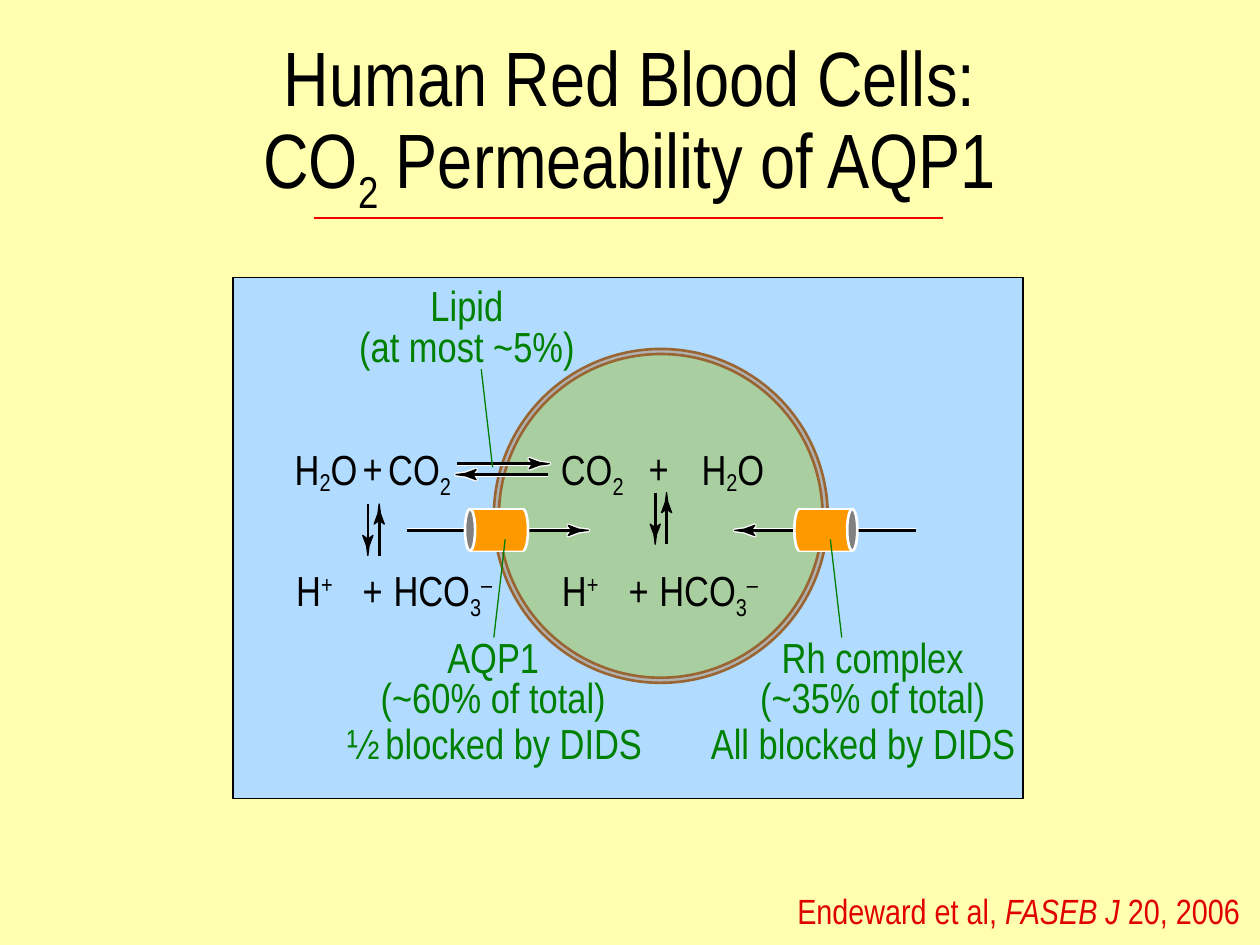
from dataclasses import dataclass

from lxml import etree
from pptx import Presentation
from pptx import util as u
from pptx.dml.color import RGBColor
from pptx.enum import shapes, text
from pptx.oxml import ns

Pt = u.Pt


@dataclass(frozen=True)
class Theme:
    font: str = "Arial Narrow"
    title_size: float = 44
    label_size: float = 24
    citation_size: float = 20
    page: str = "FFFFAF"
    panel: str = "B2DCFF"
    membrane: str = "B2B2B2"
    membrane_edge: str = "996633"
    cytosol: str = "A9CFA1"
    channel: str = "FF9900"
    channel_mouth: str = "808080"
    ink: str = "000000"
    halo: str = "FFFFFF"
    label: str = "008000"
    rule: str = "F00000"
    citation: str = "E10000"


THEME = Theme()
ALIGN = text.PP_ALIGN
OVAL, RECT = shapes.MSO_SHAPE.OVAL, shapes.MSO_SHAPE.RECTANGLE

WATER = ["H", ("2", -14), "O"]
DIOXIDE = ["CO", ("2", -25)]
PROTON = ["H", ("+", 30)]
BICARBONATE = ["HCO", ("3", -25), ("–", 30)]


def add_text(slide, box, lines, size=THEME.label_size, color=THEME.ink,
             align=ALIGN.CENTER, spacing=None, wrap=False, grow=True,
             anchor=text.MSO_ANCHOR.TOP):
    frame = slide.shapes.add_textbox(*map(Pt, box)).text_frame
    frame.word_wrap = wrap
    frame.vertical_anchor = anchor
    if grow:
        frame.auto_size = text.MSO_AUTO_SIZE.SHAPE_TO_FIT_TEXT
    for index, line in enumerate(lines):
        paragraph = frame.paragraphs[0] if index == 0 else frame.add_paragraph()
        paragraph.alignment = align
        if spacing:
            paragraph.line_spacing = spacing
        for part in line:
            if part == "\n":
                paragraph.add_line_break()
                continue
            words, style = part if isinstance(part, tuple) else (part, None)
            run = paragraph.add_run()
            run.text = words
            run.font.name = THEME.font
            run.font.size = Pt(size)
            run.font.color.rgb = RGBColor.from_string(color)
            if style == "italic":
                run.font.italic = True
            elif style:
                run._r.get_or_add_rPr().set("baseline", str(style * 1000))


def paint(shape, fill, edge, width):
    shape.shadow.inherit = False
    shape.fill.solid()
    shape.fill.fore_color.rgb = RGBColor.from_string(fill)
    if edge:
        shape.line.color.rgb = RGBColor.from_string(edge)
        shape.line.width = Pt(width)
    else:
        shape.line.fill.background()


def add_block(slide, kind, box, fill, edge=None, width=1.5):
    paint(slide.shapes.add_shape(kind, *map(Pt, box)), fill, edge, width)


def add_line(slide, start, end, color, width):
    line = slide.shapes.add_connector(
        shapes.MSO_CONNECTOR.STRAIGHT, *map(Pt, (*start, *end)))
    line.line.color.rgb = RGBColor.from_string(color)
    line.line.width = Pt(width)
    etree.SubElement(line._element.spPr, ns.qn("a:effectLst"))


def add_arrow(slide, tail, tip, halo=False):
    dx, dy = tip[0] - tail[0], tip[1] - tail[1]
    length = abs(dx) + abs(dy)
    dx, dy = dx / length, dy / length

    def behind(back, side):
        return (tip[0] - back * dx - side * dy, tip[1] - back * dy + side * dx)

    outline = [behind(*step) for step in (
        (9.4, 0), (11.5, 2.9), (5.6, 0.7), (0, 0), (5.6, -0.7), (11.5, -2.9))]
    coats = [(THEME.halo, 2.25, 2.25)] if halo else []
    for color, shaft_width, head_width in coats + [(THEME.ink, 1.5, 0.75)]:
        add_line(slide, tail, behind(9.2, 0), color, shaft_width)
        builder = slide.shapes.build_freeform(*map(Pt, outline[0]))
        builder.add_line_segments([tuple(map(Pt, point)) for point in outline[1:]])
        paint(builder.convert_to_shape(), color, color, head_width)


def add_title(slide, box):
    left, top, width, height = box
    add_text(slide, box,
             [["Human Red Blood Cells:", "\n", *DIOXIDE, " Permeability of AQP1"]],
             size=THEME.title_size, spacing=0.8, wrap=True, grow=False,
             anchor=text.MSO_ANCHOR.MIDDLE)
    rule = top + height + 7.2
    add_line(slide, (left + 179.3, rule), (left + 538.6, rule), THEME.rule, 1.5)


def add_channel(slide, box, mouth_left):
    left, top, width, height = box
    cap = 5.8
    add_line(slide, (left, top + height), (left + width, top + height), THEME.halo, 1.5)
    ends = [left - cap / 2, left + width - cap / 2]
    mouth, back = ends if mouth_left else reversed(ends)
    add_block(slide, OVAL, (back, top, cap, height), THEME.channel, THEME.halo)
    add_block(slide, RECT, box, THEME.channel)
    add_block(slide, OVAL, (mouth, top, cap, height), THEME.channel_mouth, THEME.halo)
    add_line(slide, (left, top), (left + width, top), THEME.halo, 1.5)


def add_cell_diagram(slide, box):
    left, top, width, height = box

    def at(x, y):
        return left + x, top + y

    add_block(slide, RECT, box, THEME.panel, THEME.ink, 0.75)
    add_block(slide, OVAL, (*at(149, 41), 190.8, 190.8),
              THEME.membrane, THEME.membrane_edge)
    add_block(slide, OVAL, (*at(151.9, 43.9), 185, 185),
              THEME.cytosol, THEME.membrane_edge)

    upper, lower = 91.4, 160.6
    species = [
        (WATER, 51, upper, (28.1, 260.6)),
        (DIOXIDE, 53.3, upper, (79.9, 178.6)),
        (PROTON, 36.7, lower, (28.1, 180)),
        (BICARBONATE, 74.2, lower, (82.8, 234.7)),
        (["+"], 25.9, upper - 0.4, (67, 230.4)),
        (["+"], 25.9, lower, (67, 218.9)),
    ]
    for formula, wide, y, columns in species:
        wraps = formula in (DIOXIDE, BICARBONATE)
        align = ALIGN.LEFT if formula in (WATER, ["+"]) else ALIGN.CENTER
        for x in columns:
            add_text(slide, (*at(x, y), wide, 36), [formula], align=align, wrap=wraps)

    for x, y in ((77, 129.6), (241.2, 123.1)):
        add_arrow(slide, at(x, y), at(x, y + 29.5))
        add_arrow(slide, at(x + 6.5, y + 29.5), at(x + 6.5, y))
    add_arrow(slide, at(128.2, 106.6), at(180.7, 106.6), halo=True)
    add_arrow(slide, at(180, 112.8), at(127.4, 112.8), halo=True)

    for tail, tip, channel in ((99.4, 203, 135.4), (390.2, 286.6, 323.6)):
        add_arrow(slide, at(tail, 144.7), at(tip, 144.7), halo=True)
        add_channel(slide, (*at(channel, 132.5), 30.2, 23.8), mouth_left=tail < tip)

    pathways = [
        (["Rh complex", "(~35% of total)"], (293.8, 204.5), 143.3,
         (341.3, 149.8), (347.8, 205.9)),
        (["AQP1", "(~60% of total)"], (77, 204.5), 143.3,
         (155.5, 149.8), (149, 205.9)),
        (["Lipid", "(at most ~5%)"], (64.1, 3.6), 139,
         (141.8, 52.6), (148.3, 108.7)),
        (["½ blocked by DIDS"], (57.6, 253.4), 183.6, None, None),
        (["All blocked by DIDS"], (265.7, 253.4), 188.6, None, None),
    ]
    for lines, corner, wide, start, end in pathways:
        add_text(slide, (*at(*corner), wide, 7.2 + 23 * len(lines)),
                 [[line] for line in lines], color=THEME.label, spacing=0.8)
        if start:
            add_line(slide, at(*start), at(*end), THEME.label, 0.75)


def add_citation(slide, box):
    add_text(slide, box, [["Endeward et al, ", ("FASEB J", "italic"), " 20, 2006"]],
             size=THEME.citation_size, color=THEME.citation,
             align=ALIGN.RIGHT, wrap=True)


def main():
    deck = Presentation()
    deck.slide_width, deck.slide_height = Pt(720), Pt(540)
    slide = deck.slides.add_slide(deck.slide_layouts[6])
    slide.background.fill.solid()
    slide.background.fill.fore_color.rgb = RGBColor.from_string(THEME.page)
    add_cell_diagram(slide, (133.2, 158.4, 451.4, 298.1))
    add_title(slide, (0, 27.4, 720, 90))
    add_citation(slide, (433.4, 504.7, 282.2, 31))
    deck.save("out.pptx")


if __name__ == "__main__":
    main()
